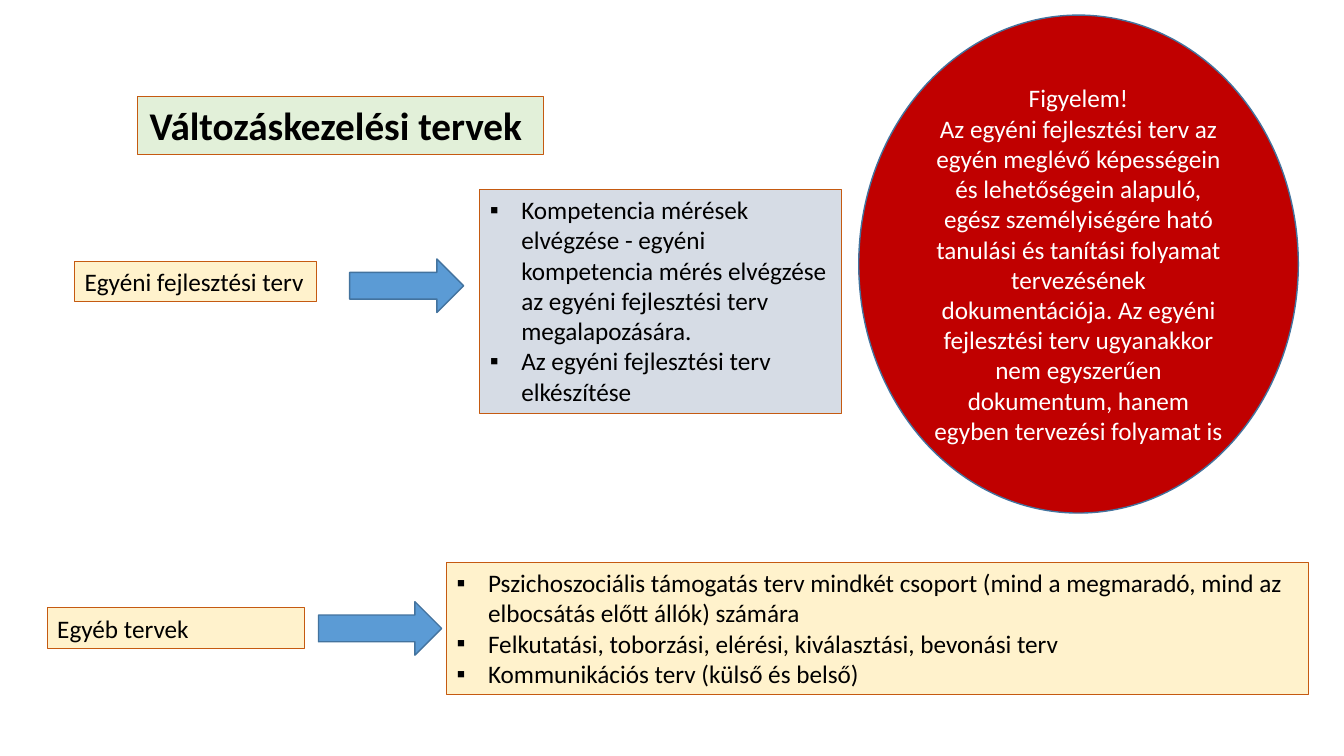
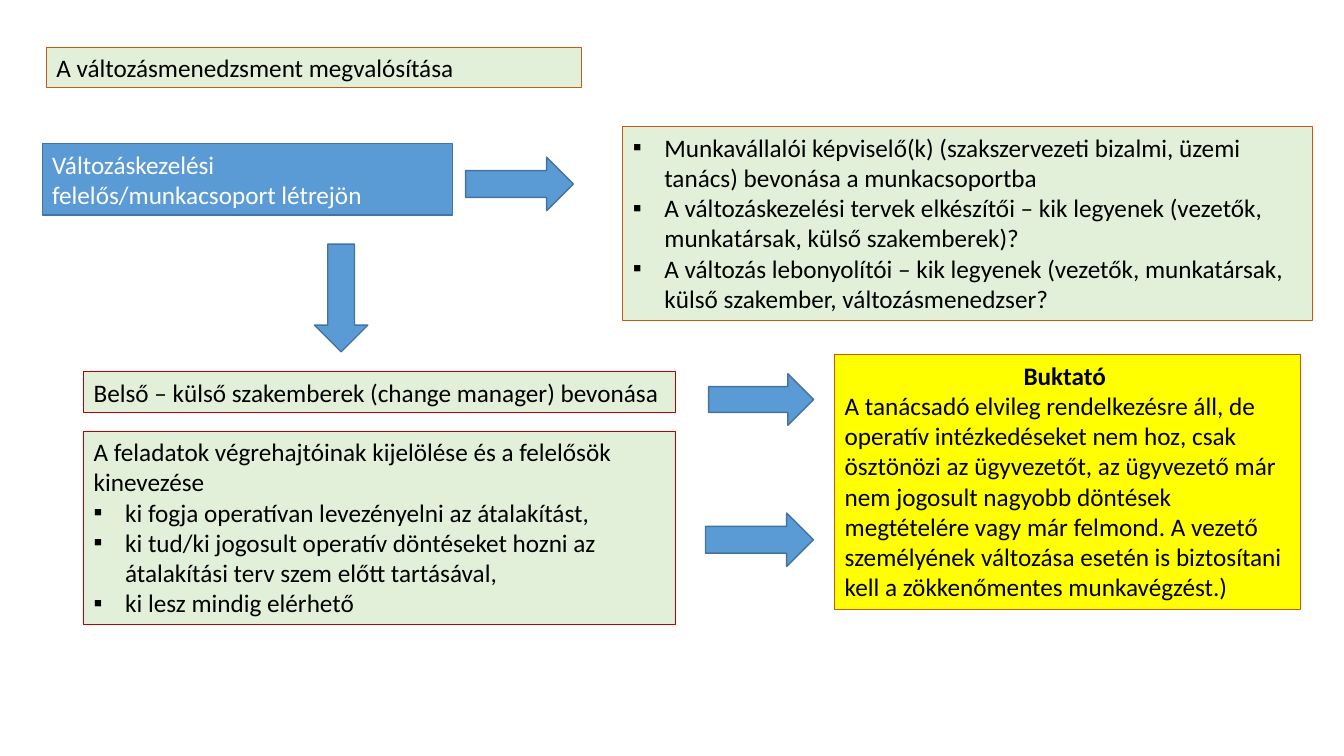
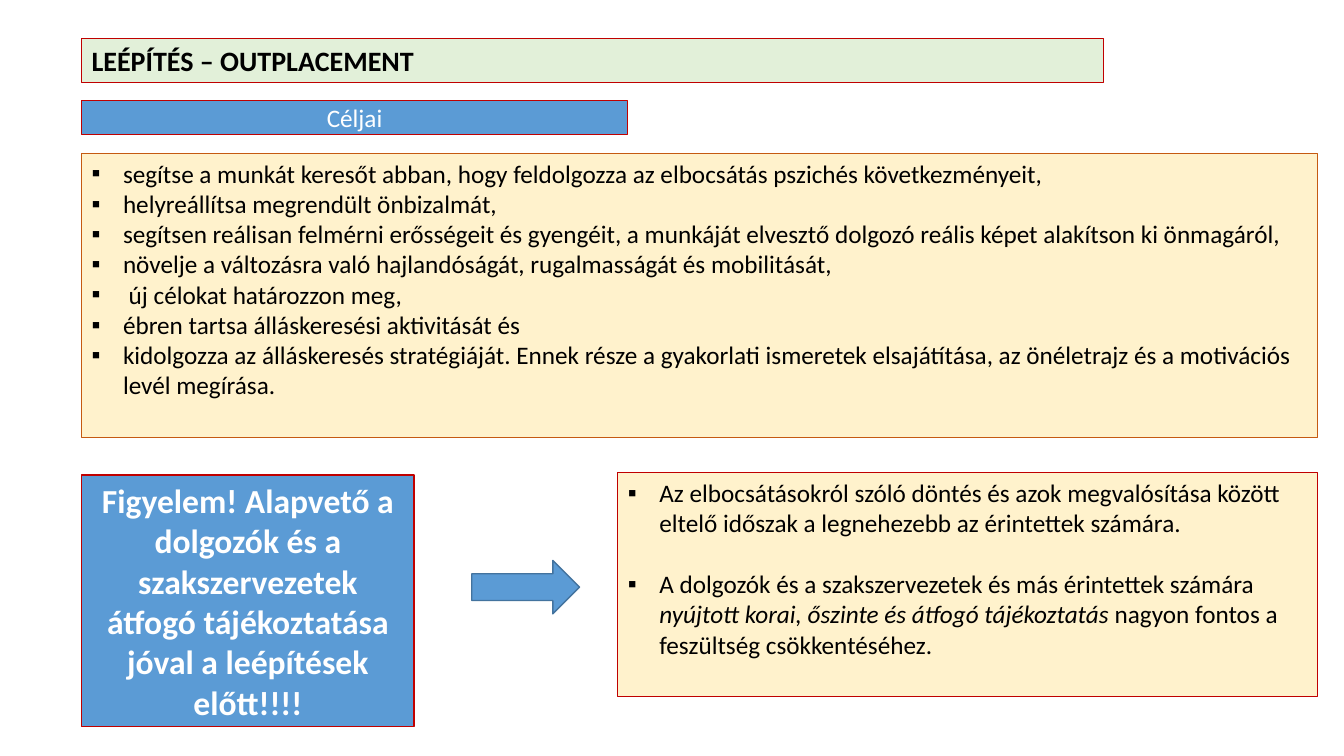
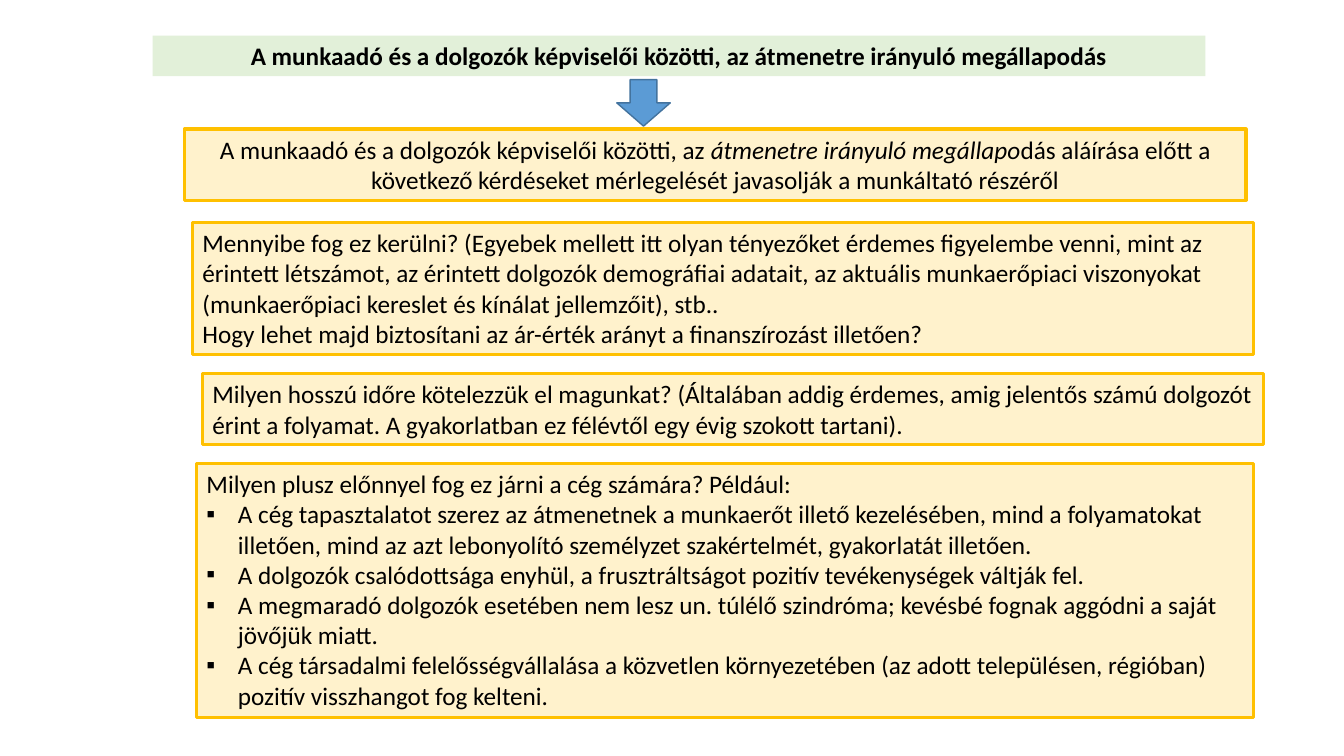
from lxml.etree import SubElement
from pptx import Presentation
from pptx.dml.color import RGBColor
from pptx.enum.shapes import MSO_SHAPE as Preset
from pptx.enum.text import MSO_ANCHOR as Anchor, PP_ALIGN as Align
from pptx.oxml.ns import qn
from pptx.util import Pt

FONT = "Calibri"
LINE_HEIGHT = 21.8
INSETS = 7.2
BULLET = "▪ "
BULLET_INDENT = 22.5

BLACK = RGBColor(0, 0, 0)
WHITE = RGBColor(0xFF, 0xFF, 0xFF)
GREEN = RGBColor(0xE2, 0xF0, 0xD9)
CREAM = RGBColor(0xFF, 0xF2, 0xCC)
GREY = RGBColor(0xD6, 0xDC, 0xE5)
YELLOW = RGBColor(0xFF, 0xFF, 0)
BLUE = RGBColor(0x5B, 0x9B, 0xD5)
DARK_BLUE = RGBColor(0x43, 0x73, 0x9E)
ORANGE = RGBColor(0xC5, 0x5A, 0x11)
RED = RGBColor(0xC0, 0, 0)
GOLD = RGBColor(0xFF, 0xC0, 0)


def add_figure(slide, preset, left, top, width, height, fill, line, line_width):
    shape = slide.shapes.add_shape(preset, Pt(left), Pt(top), Pt(width), Pt(height))
    shape.shadow.inherit = False
    shape.fill.solid()
    shape.fill.fore_color.rgb = fill
    if line is None:
        shape.line.fill.background()
    else:
        shape.line.color.rgb = line
        shape.line.width = Pt(line_width)
    return shape


def add_bullet(paragraph):
    properties = paragraph._p.get_or_add_pPr()
    properties.set("marL", str(Pt(BULLET_INDENT)))
    properties.set("indent", str(-Pt(BULLET_INDENT)))
    SubElement(properties, qn("a:buFont")).set("typeface", "Arial")
    SubElement(properties, qn("a:buChar")).set("char", BULLET.strip())


def write_text(shape, texts, size=18, color=BLACK, bold=False,
               align=Align.LEFT, anchor=Anchor.TOP, wrap=True):
    """Write one paragraph per text; '▪ ' starts a bullet, asterisks enclose italics."""
    frame = shape.text_frame
    frame.word_wrap = wrap
    frame.vertical_anchor = anchor
    for index, text in enumerate(texts):
        paragraph = frame.add_paragraph() if index else frame.paragraphs[0]
        paragraph.alignment = align
        if text.startswith(BULLET):
            add_bullet(paragraph)
        for part, words in enumerate(text.removeprefix(BULLET).split("*")):
            run = paragraph.add_run()
            run.text = words
            run.font.name = FONT
            run.font.size = Pt(size)
            run.font.color.rgb = color
            run.font.bold = bold
            run.font.italic = part % 2 == 1


def add_box(slide, left, top, width, lines, texts, fill=CREAM, line=ORANGE,
            line_width=0.75, **text_style):
    """Add a text box whose height holds the given number of 18-point lines."""
    height = lines * LINE_HEIGHT + INSETS
    shape = add_figure(slide, Preset.RECTANGLE, left, top, width, height,
                       fill, line, line_width)
    write_text(shape, texts, **text_style)
    return shape


def add_callout(slide, preset, left, top, width, height, texts, fill=BLUE,
                line=DARK_BLUE, align=Align.CENTER, **text_style):
    """Add a shape with white text in its middle."""
    shape = add_figure(slide, preset, left, top, width, height, fill, line, 1)
    write_text(shape, texts, color=WHITE, align=align, anchor=Anchor.MIDDLE,
               **text_style)


def add_arrow(slide, left, top, width=77, height=38.2, preset=Preset.RIGHT_ARROW):
    add_figure(slide, preset, left, top, width, height, BLUE, DARK_BLUE, 1)


def build_plans(slide):
    title = add_figure(slide, Preset.RECTANGLE, 98, 69, 290, 41.2, GREEN, ORANGE, 0.75)
    write_text(title, ["Változáskezelési tervek "], size=28, bold=True,
               align=Align.CENTER, wrap=False)
    add_box(slide, 53.3, 186.6, 173, 1, ["Egyéni fejlesztési terv"], wrap=False)
    add_box(slide, 342.8, 135.4, 258.4, 7, [
        "▪ Kompetencia mérések elvégzése - egyéni kompetencia mérés elvégzése "
        "az egyéni fejlesztési terv megalapozására.",
        "▪ Az egyéni fejlesztési terv elkészítése",
    ], fill=GREY)
    add_box(slide, 33.8, 434.2, 183.6, 1, ["Egyéb tervek"])
    add_arrow(slide, 227.5, 429.8, width=88)
    add_box(slide, 319, 401.8, 615.6, 4, [
        "▪ Pszichoszociális támogatás terv mindkét csoport (mind a megmaradó, "
        "mind az elbocsátás előtt állók) számára",
        "▪ Felkutatási, toborzási, elérési, kiválasztási, bevonási terv",
        "▪ Kommunikációs terv (külső és belső)",
    ])
    add_arrow(slide, 249.8, 185, width=81.4)
    add_callout(slide, Preset.OVAL, 613.4, 10.8, 314, 355.7, [
        "Figyelem!",
        "Az egyéni fejlesztési terv az egyén meglévő képességein és lehetőségein "
        "alapuló, egész személyiségére ható tanulási és tanítási folyamat "
        "tervezésének dokumentációja. Az egyéni fejlesztési terv ugyanakkor nem "
        "egyszerűen dokumentum, hanem egyben tervezési folyamat is",
    ], fill=RED)


def build_implementation(slide):
    add_box(slide, 33.1, 33.8, 382.3, 1, ["A változásmenedzsment megvalósítása"],
            fill=GREEN)
    add_callout(slide, Preset.RECTANGLE, 30.2, 102.4, 293, 51.2,
                ["Változáskezelési felelős/munkacsoport létrejön"], align=Align.LEFT)
    add_arrow(slide, 332.6, 112.3)
    add_box(slide, 445, 90.7, 492.5, 6, [
        "▪ Munkavállalói képviselő(k) (szakszervezeti bizalmi, üzemi tanács) "
        "bevonása a munkacsoportba",
        "▪ A változáskezelési tervek elkészítői – kik legyenek (vezetők, "
        "munkatársak, külső szakemberek)?",
        "▪ A változás lebonyolítói – kik legyenek (vezetők, munkatársak, "
        "külső szakember, változásmenedzser?",
    ], fill=GREEN)
    add_box(slide, 59.8, 265.7, 422.6, 1,
            ["Belső – külső szakemberek (change manager) bevonása"],
            fill=GREEN, line=RED, wrap=False)
    add_box(slide, 59.8, 308.2, 422.6, 6, [
        "A feladatok végrehajtóinak kijelölése és a felelősök kinevezése",
        "▪ ki fogja operatívan levezényelni az átalakítást,",
        "▪ ki tud/ki jogosult operatív döntéseket hozni az átalakítási terv "
        "szem előtt tartásával,",
        "▪ ki lesz mindig elérhető",
    ], fill=GREEN, line=RED)
    add_arrow(slide, 224.6, 174.4, 38.2, 77, Preset.DOWN_ARROW)
    add_arrow(slide, 504, 366.5)
    pitfall = add_box(slide, 596.3, 253.6, 332.6, 8, [
        "Buktató ",
        "A tanácsadó elvileg rendelkezésre áll, de operatív intézkedéseket nem hoz, "
        "csak ösztönözi az ügyvezetőt, az ügyvezető már nem jogosult nagyobb "
        "döntések megtételére vagy már felmond. A vezető személyének változása "
        "esetén is biztosítani kell a zökkenőmentes munkavégzést.)",
    ], fill=YELLOW)
    heading = pitfall.text_frame.paragraphs[0]
    heading.alignment = Align.CENTER
    heading.runs[0].font.bold = True
    add_arrow(slide, 506.2, 267, 75, 36.8)


def build_outplacement(slide):
    left = 58.3
    title = add_figure(slide, Preset.RECTANGLE, left, 27.4, 730, 31.6, GREEN, RED, 0.75)
    write_text(title, ["LEÉPÍTÉS – OUTPLACEMENT"], size=20, bold=True)
    add_box(slide, left, 109.4, 882.7, 9, [
        "▪ segítse a munkát keresőt abban, hogy feldolgozza az elbocsátás "
        "pszichés következményeit,",
        "▪ helyreállítsa megrendült önbizalmát,",
        "▪ segítsen reálisan felmérni erősségeit és gyengéit, a munkáját elvesztő "
        "dolgozó reális képet alakítson ki önmagáról,",
        "▪ növelje a változásra való hajlandóságát, rugalmasságát és mobilitását,",
        "▪  új célokat határozzon meg,",
        "▪ ébren tartsa álláskeresési aktivitását és",
        "▪ kidolgozza az álláskeresés stratégiáját. Ennek része a gyakorlati "
        "ismeretek elsajátítása, az önéletrajz és a motivációs levél megírása.",
    ])
    add_callout(slide, Preset.RECTANGLE, left, 339.2, 237.6, 180, [
        "Figyelem! Alapvető a dolgozók és a szakszervezetek átfogó tájékoztatása "
        "jóval a leépítések előtt!!!!",
    ], line=RED, size=24, bold=True)
    add_callout(slide, Preset.RECTANGLE, left, 72, 390, 24, ["Céljai"], line=RED)
    add_arrow(slide, 337, 400.3)
    notice = add_box(slide, 441.4, 337.5, 499.6, 7, [
        "▪ Az elbocsátásokról szóló döntés és azok megvalósítása között eltelő "
        "időszak a legnehezebb az érintettek számára.",
        "▪ A dolgozók és a szakszervezetek és más érintettek számára *nyújtott "
        "korai, őszinte és átfogó tájékoztatás *nagyon fontos a feszültség "
        "csökkentéséhez.",
    ], line=RED)
    notice.text_frame.paragraphs[1].space_before = Pt(LINE_HEIGHT)


def build_agreement(slide):
    gold_frame = {"line": GOLD, "line_width": 2.25}
    add_box(slide, 109, 25.4, 752, 1, [
        "A munkaadó és a dolgozók képviselői közötti, az átmenetre irányuló "
        "megállapodás",
    ], fill=GREEN, line=None, bold=True, align=Align.CENTER)
    add_box(slide, 131.8, 92.2, 758.2, 2, [
        "A munkaadó és a dolgozók képviselői közötti, az *átmenetre irányuló "
        "megállapo*dás aláírása előtt a következő kérdéseket mérlegelését "
        "javasolják a munkáltató részéről",
    ], align=Align.CENTER, **gold_frame)
    add_arrow(slide, 440.6, 56.9, 38.2, 33.2, Preset.DOWN_ARROW)
    add_box(slide, 137.5, 159, 758.2, 4, [
        "Mennyibe fog ez kerülni? (Egyebek mellett itt olyan tényezőket érdemes "
        "figyelembe venni, mint az érintett létszámot, az érintett dolgozók "
        "demográfiai adatait, az aktuális munkaerőpiaci viszonyokat "
        "(munkaerőpiaci kereslet és kínálat jellemzőit), stb..",
        "Hogy lehet majd biztosítani az ár-érték arányt a finanszírozást illetően?",
    ], **gold_frame)
    add_box(slide, 144.6, 267, 758.2, 2, [
        "Milyen hosszú időre kötelezzük el magunkat? (Általában addig érdemes, "
        "amig jelentős számú dolgozót érint a folyamat. A gyakorlatban ez "
        "félévtől egy évig szokott tartani).",
    ], **gold_frame)
    add_box(slide, 140.4, 331, 755.3, 8, [
        "Milyen plusz előnnyel fog ez járni a cég számára? Például:",
        "▪ A cég tapasztalatot szerez az átmenetnek a munkaerőt illető kezelésében, "
        "mind a folyamatokat illetően, mind az azt lebonyolító személyzet "
        "szakértelmét, gyakorlatát illetően.",
        "▪ A dolgozók csalódottsága enyhül, a frusztráltságot pozitív "
        "tevékenységek váltják fel.",
        "▪ A megmaradó dolgozók esetében nem lesz un. túlélő szindróma; kevésbé "
        "fognak aggódni a saját jövőjük miatt.",
        "▪ A cég társadalmi felelősségvállalása a közvetlen környezetében (az adott "
        "településen, régióban) pozitív visszhangot fog kelteni.",
    ], **gold_frame)


def main():
    presentation = Presentation()
    presentation.slide_width = Pt(960)
    presentation.slide_height = Pt(540)
    blank_layout = presentation.slide_layouts[6]
    for build in (build_plans, build_implementation, build_outplacement,
                  build_agreement):
        build(presentation.slides.add_slide(blank_layout))
    presentation.save("out.pptx")


if __name__ == "__main__":
    main()
